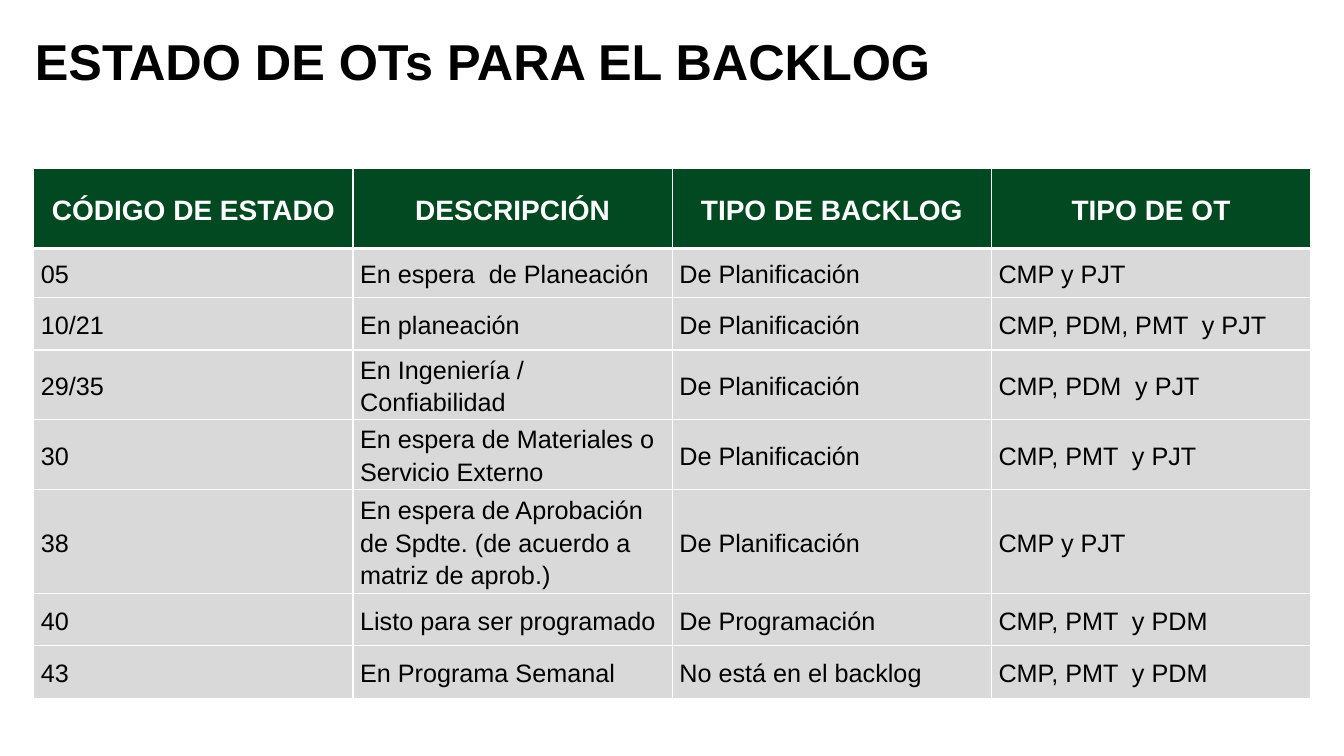
import lxml.etree
import pptx
import pptx.dml.color
import pptx.enum.text
import pptx.oxml.ns
import pptx.util

Cm = pptx.util.Cm
Pt = pptx.util.Pt
RGBColor = pptx.dml.color.RGBColor

BLACK = RGBColor(0x00, 0x00, 0x00)
WHITE = RGBColor(0xFF, 0xFF, 0xFF)
GREEN = RGBColor(0x02, 0x49, 0x21)
GREY = RGBColor(0xD9, 0xD9, 0xD9)
FONT = "Arial"

HEADINGS = ["CÓDIGO DE ESTADO", "DESCRIPCIÓN", "TIPO DE BACKLOG", "TIPO DE OT"]
STATES = [
    ["05", "En espera  de Planeación", "De Planificación", "CMP y PJT"],
    ["10/21", "En planeación", "De Planificación", "CMP, PDM, PMT  y PJT"],
    ["29/35", "En Ingeniería / Confiabilidad", "De Planificación", "CMP, PDM  y PJT"],
    ["30", "En espera de Materiales o Servicio Externo", "De Planificación",
     "CMP, PMT  y PJT"],
    ["38", "En espera de Aprobación de Spdte. (de acuerdo a matriz de aprob.)",
     "De Planificación", "CMP y PJT"],
    ["40", "Listo para ser programado", "De Programación", "CMP, PMT  y PDM"],
    ["43", "En Programa Semanal", "No está en el backlog", "CMP, PMT  y PDM"],
]
HEADING_HEIGHT = Cm(2.01)
STATE_HEIGHTS = [Cm(1.24)] + [Cm(1.32)] * (len(STATES) - 1)


def set_font(paragraph, size, color, bold):
    font = paragraph.font
    font.name = FONT
    font.size = Pt(size)
    font.bold = bold
    font.color.rgb = color


def set_borders(cell, bottom_width):
    properties = cell._tc.get_or_add_tcPr()
    qn = pptx.oxml.ns.qn
    for side, width in (("L", 1), ("R", 1), ("T", 1), ("B", bottom_width)):
        line = lxml.etree.SubElement(properties, qn(f"a:ln{side}"), w=str(Pt(width)))
        fill = lxml.etree.SubElement(line, qn("a:solidFill"))
        lxml.etree.SubElement(fill, qn("a:srgbClr"), val=str(WHITE))


def fill_cell(cell, text, is_heading):
    # Borders precede the fill in the cell properties
    set_borders(cell, 3 if is_heading else 1)
    cell.fill.solid()
    cell.fill.fore_color.rgb = GREEN if is_heading else GREY
    cell.margin_left = cell.margin_right = Cm(0.18)
    cell.margin_top = cell.margin_bottom = 0
    cell.vertical_anchor = pptx.enum.text.MSO_ANCHOR.MIDDLE

    cell.text = text
    paragraph = cell.text_frame.paragraphs[0]
    paragraph.line_spacing = 1.15
    paragraph.space_after = Pt(10)
    if is_heading:
        paragraph.alignment = pptx.enum.text.PP_ALIGN.CENTER
        set_font(paragraph, 20, WHITE, True)
    else:
        set_font(paragraph, 18, BLACK, False)


def add_title(slide, left, top, width, height):
    title = slide.shapes.add_textbox(left, top, width, height)
    title.text_frame.word_wrap = True
    title.text_frame.auto_size = pptx.enum.text.MSO_AUTO_SIZE.SHAPE_TO_FIT_TEXT
    title.text_frame.text = "ESTADO DE OTs PARA EL BACKLOG"
    set_font(title.text_frame.paragraphs[0], 36, BLACK, True)


def add_state_table(slide, left, top, width):
    heights = [HEADING_HEIGHT] + STATE_HEIGHTS
    rows = [HEADINGS] + STATES
    states = slide.shapes.add_table(
        len(rows), len(HEADINGS), left, top, width, sum(heights)).table
    states.horz_banding = False
    for row_index, (texts, height) in enumerate(zip(rows, heights)):
        states.rows[row_index].height = height
        for column_index, text in enumerate(texts):
            fill_cell(states.cell(row_index, column_index), text, row_index == 0)


def main():
    presentation = pptx.Presentation()
    presentation.slide_width = Cm(33.87)
    presentation.slide_height = Cm(19.05)
    slide = presentation.slides.add_slide(presentation.slide_layouts[6])

    # Title
    add_title(slide, Cm(0.63), Cm(0.63), Cm(26.42), Cm(1.8))
    # Table of work order states
    add_state_table(slide, Cm(0.85), Cm(4.25), Cm(32.18))

    presentation.save("out.pptx")


if __name__ == "__main__":
    main()
